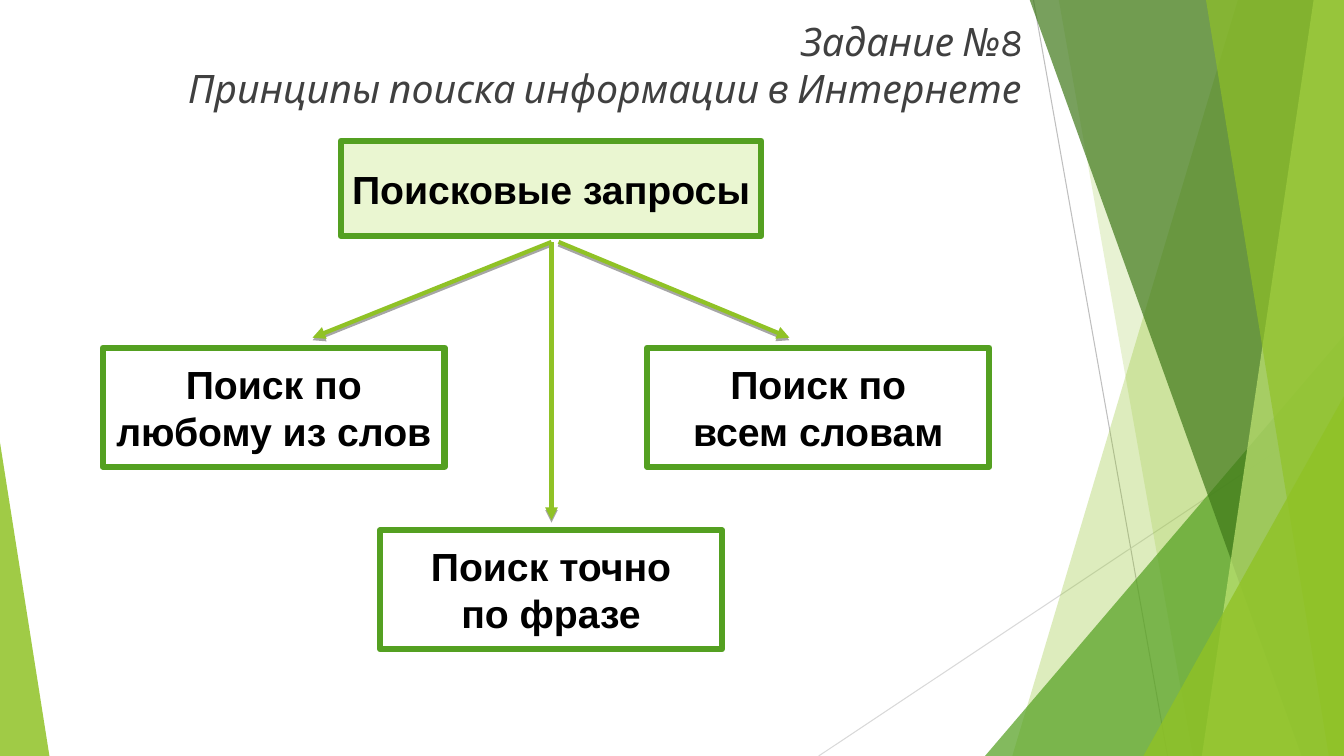
"""Build a slide with a tree of search query types beside green facets."""
from lxml import etree
from pptx import Presentation
from pptx.dml.color import RGBColor
from pptx.enum.shapes import MSO_CONNECTOR, MSO_SHAPE
from pptx.enum.text import MSO_ANCHOR, PP_ALIGN
from pptx.oxml.ns import qn
from pptx.util import Inches, Pt

STRAIGHT = MSO_CONNECTOR.STRAIGHT
RECTANGLE, TRIANGLE = MSO_SHAPE.RECTANGLE, MSO_SHAPE.ISOSCELES_TRIANGLE
TOP, MIDDLE = MSO_ANCHOR.TOP, MSO_ANCHOR.MIDDLE
CENTER, RIGHT = PP_ALIGN.CENTER, PP_ALIGN.RIGHT

WIDTH, HEIGHT = 13.33, 7.5
COLORS = {
    "white": "FFFFFF", "black": "000000", "title": "404040",
    "lime": "90C226", "green": "54A021", "dark": "3F7819",
    "light": "C0E474", "pale": "EAF6D1",
    "gray": "BFBFBF", "light gray": "D9D9D9",
}

TITLE = "Задание №8\vПринципы поиска информации в Интернете"
ROOT = ("Поисковые запросы", (3.38, 1.4, 4.17, 0.94))
BRANCH_SIZE = (3.39, 1.18)
BRANCHES = [
    (("Поиск по", "любому из слов"), (1.02, 3.45)),
    (("Поиск по", "всем словам"), (6.42, 3.45)),
    (("Поиск точно", "по фразе"), (3.77, 5.26)),
]
ARROW_TOP = 2.4
ARROWS = [((3.1, 3.35), 5.47), ((7.83, 3.35), 5.54), ((5.47, 5.16), 5.47)]

RULES = [
    ((10.25, 0), (11.58, HEIGHT), "gray"),
    ((WIDTH, 4.03), (8.12, HEIGHT), "light gray"),
]
BANDS_BEHIND = [(12.28, 10.04, "lime", 30), (10.5, 11.83, "lime", 20)]
BANDS_FRONT = [
    (10.21, 12.91, "dark", 70),
    (13.03, 11.92, "light", 70),
    (11.96, 13.18, "lime", 65),
]
CORNER_BEHIND = (9.77, 3.56, 4.17, 1, "green", 72)
CORNERS_FRONT = [(11.34, 1.99, 3.57, 1, "lime", 80), (0, 0.49, 3.11, 0, "lime", 85)]


def rgb(name):
    return RGBColor.from_string(COLORS[name])


def set_fill(shape, color, opacity=100):
    shape.shadow.inherit = False
    shape.fill.solid()
    shape.fill.fore_color.rgb = rgb(color)
    if opacity < 100:
        color_element = shape.fill._xPr.find(qn("a:solidFill"))[0]
        etree.SubElement(color_element, qn("a:alpha"), val=str(opacity * 1000))


def add_band(slide, top_left, bottom_left, color, opacity):
    corners = [(WIDTH, -0.01), (WIDTH, HEIGHT), (bottom_left, HEIGHT)]
    builder = slide.shapes.build_freeform(Inches(top_left), Inches(-0.01))
    builder.add_line_segments([(Inches(x), Inches(y)) for x, y in corners])
    shape = builder.convert_to_shape()
    set_fill(shape, color, opacity)
    shape.line.fill.background()


def add_corner(slide, left, width, height, apex, color, opacity):
    box = (left, HEIGHT - height, width, height)
    shape = slide.shapes.add_shape(TRIANGLE, *map(Inches, box))
    shape.adjustments[0] = apex
    set_fill(shape, color, opacity)
    shape.line.fill.background()


def add_line(slide, start, end, color, width):
    line = slide.shapes.add_connector(STRAIGHT, *map(Inches, (*start, *end)))
    line.line.color.rgb = rgb(color)
    line.line.width = Pt(width)
    effects = etree.SubElement(line._element.spPr, qn("a:effectLst"))
    return line, effects


def add_arrow(slide, target, origin):
    arrow, effects = add_line(slide, target, origin, "lime", 3)
    etree.SubElement(arrow.line._get_or_add_ln(), qn("a:headEnd"), type="triangle")
    shadow = etree.SubElement(
        effects, qn("a:outerShdw"), blurRad="0", dist=str(Pt(1.8)),
        dir="5400000", rotWithShape="0")
    shade = etree.SubElement(shadow, qn("a:srgbClr"), val=COLORS["black"])
    etree.SubElement(shade, qn("a:alpha"), val="35000")


def write_text(shape, lines, *, font, color, align, anchor, wrap, bold=False, italic=False):
    frame = shape.text_frame
    frame.word_wrap = wrap
    frame.vertical_anchor = anchor
    frame.text = "\n".join(lines)
    for paragraph in frame.paragraphs:
        paragraph.alignment = align
        for run in paragraph.runs:
            run.font.name = font
            run.font.size = Pt(28)
            run.font.bold = bold
            run.font.italic = italic
            run.font.color.rgb = rgb(color)


def add_box(slide, lines, box, fill):
    shape = slide.shapes.add_shape(RECTANGLE, *map(Inches, box))
    set_fill(shape, fill)
    shape.line.color.rgb = rgb("green")
    shape.line.width = Pt(4.5)
    write_text(shape, lines, font="Arial", color="black", align=CENTER,
               anchor=MIDDLE, wrap=False, bold=True)


def add_background(slide):
    for start, end, color in RULES:
        add_line(slide, start, end, color, 0.75)
    for band in BANDS_BEHIND:
        add_band(slide, *band)
    add_corner(slide, *CORNER_BEHIND)
    for band in BANDS_FRONT:
        add_band(slide, *band)
    for corner in CORNERS_FRONT:
        add_corner(slide, *corner)


def main():
    presentation = Presentation()
    presentation.slide_width = Inches(WIDTH)
    presentation.slide_height = Inches(HEIGHT)
    slide = presentation.slides.add_slide(presentation.slide_layouts[6])
    add_background(slide)
    for lines, position in BRANCHES:
        add_box(slide, lines, position + BRANCH_SIZE, "white")
    for target, origin_x in ARROWS:
        add_arrow(slide, target, (origin_x, ARROW_TOP))
    root_text, root_box = ROOT
    add_box(slide, [root_text], root_box, "pale")
    title = slide.shapes.add_textbox(*map(Inches, (0, 0.12, 10.23, 1.28)))
    write_text(title, [TITLE], font="Karla", color="title", align=RIGHT,
               anchor=TOP, wrap=True, italic=True)
    presentation.save("out.pptx")


if __name__ == "__main__":
    main()
